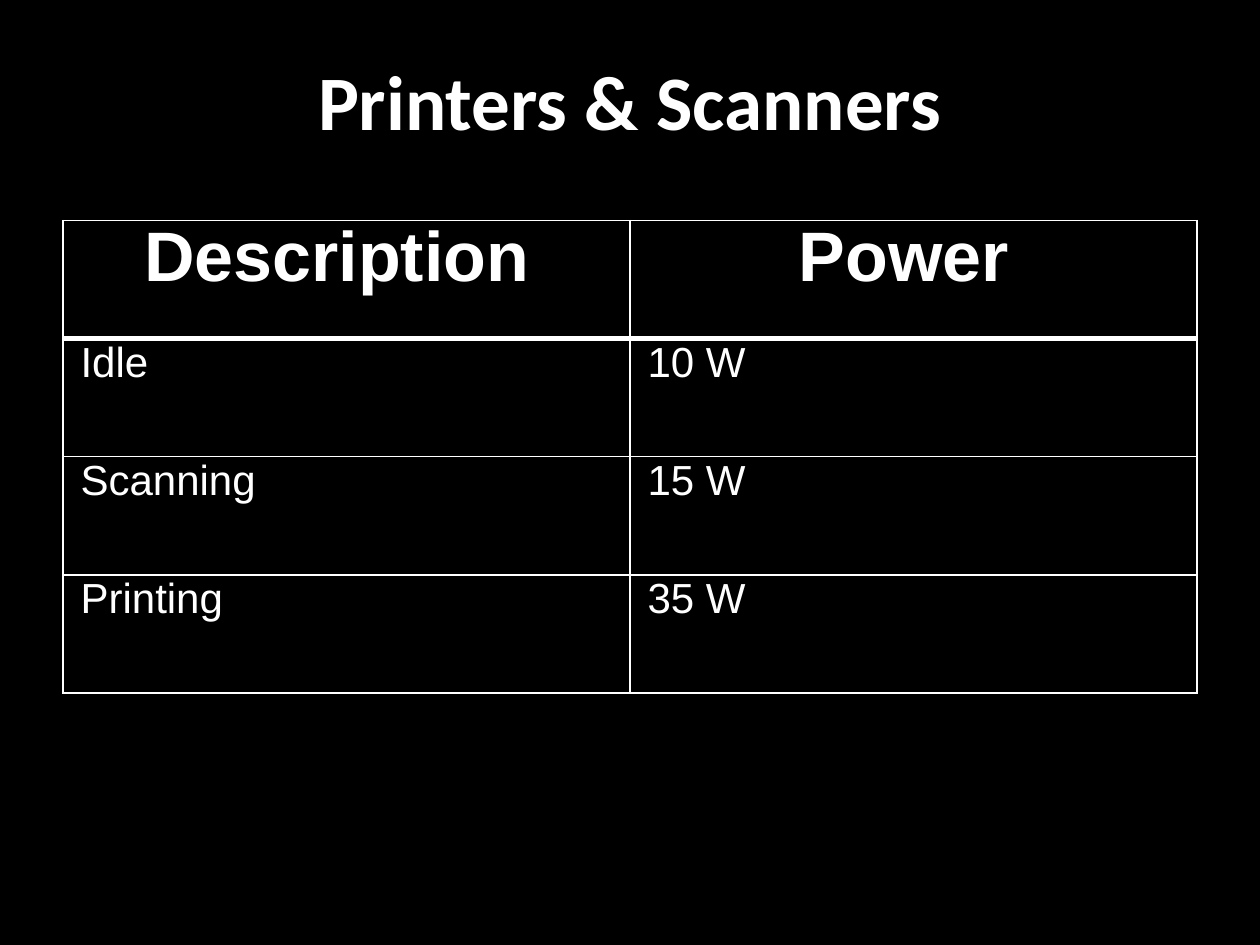
import pptx
import pptx.dml.color
import pptx.enum.text
import pptx.oxml.ns
import pptx.util
from lxml import etree

BLACK = pptx.dml.color.RGBColor(0x00, 0x00, 0x00)
WHITE = pptx.dml.color.RGBColor(0xFF, 0xFF, 0xFF)
CENTER = pptx.enum.text.PP_ALIGN.CENTER
LEFT = pptx.enum.text.PP_ALIGN.LEFT
MIDDLE = pptx.enum.text.MSO_ANCHOR.MIDDLE

TITLE_FONT = {"name": "Calibri", "size": pptx.util.Pt(44), "bold": True}
HEADER_FONT = {"name": "Arial", "size": pptx.util.Pt(40), "bold": True}
BODY_FONT = {"name": "Arial", "size": pptx.util.Pt(24), "bold": False}
CELL_MARGINS = {
    "margin_left": pptx.util.Inches(0.14),
    "margin_right": pptx.util.Inches(0.14),
    "margin_top": pptx.util.Inches(0.05),
    "margin_bottom": pptx.util.Inches(0.05),
}
POWER_ROWS = [
    ("Description ", "Power "),
    ("Idle", "10 W"),
    ("Scanning", "15 W"),
    ("Printing", "35 W"),
]


class SlideBuilder:
    """Hold the style and the current slide, and place elements by shares of its size."""

    def __init__(self, deck):
        self.deck = deck
        self.page = deck.slides.add_slide(deck.slide_layouts[5])
        background = self.page.background.fill
        background.solid()
        background.fore_color.rgb = BLACK

    def area(self, left, top, width, height):
        across, down = self.deck.slide_width, self.deck.slide_height
        return [round(share * size) for share, size in
                zip((left, top, width, height), (across, down, across, down))]

    def add_text(self, frame, text, style, align, spacing=1.0):
        para = frame.paragraphs[0]
        para.alignment = align
        para.line_spacing = spacing
        span = para.add_run()
        span.text = text
        for key, value in style.items():
            setattr(span.font, key, value)
        span.font.color.rgb = WHITE

    def title(self, text, *shares):
        box = self.page.shapes.title
        box.left, box.top, box.width, box.height = self.area(*shares)
        box.text_frame.vertical_anchor = MIDDLE
        self.add_text(box.text_frame, text, TITLE_FONT, CENTER)

    def border(self, cell, side, points):
        properties = cell._tc.get_or_add_tcPr()
        line = etree.SubElement(properties, pptx.oxml.ns.qn(f"a:ln{side}"),
                                w=str(pptx.util.Pt(points)))
        fill = etree.SubElement(line, pptx.oxml.ns.qn("a:solidFill"))
        etree.SubElement(fill, pptx.oxml.ns.qn("a:srgbClr"), val=str(WHITE))

    def table(self, rows, *shares):
        grid = self.page.shapes.add_table(len(rows), len(rows[0]), *self.area(*shares)).table
        for row, texts in enumerate(rows):
            for column, text in enumerate(texts):
                self.cell(grid.cell(row, column), row, text)

    def cell(self, cell, row, text):
        header = row == 0
        for key, value in CELL_MARGINS.items():
            setattr(cell, key, value)
        weights = {"L": 1, "R": 1, "T": 3 if row == 1 else 1, "B": 3 if header else 1}
        for side, points in weights.items():
            self.border(cell, side, points)
        cell.fill.solid()
        cell.fill.fore_color.rgb = BLACK
        self.add_text(cell.text_frame, text, HEADER_FONT if header else BODY_FONT,
                      CENTER if header else LEFT, 0.87)


def main():
    deck = pptx.Presentation()
    deck.slide_width, deck.slide_height = pptx.util.Inches(10), pptx.util.Inches(7.5)
    slide = SlideBuilder(deck)
    slide.title("Printers & Scanners", 0, 0, 1, 0.21)
    slide.table(POWER_ROWS, 0.05, 1.75 / 7.5, 0.9, 0.5)
    deck.save("out.pptx")


if __name__ == "__main__":
    main()
